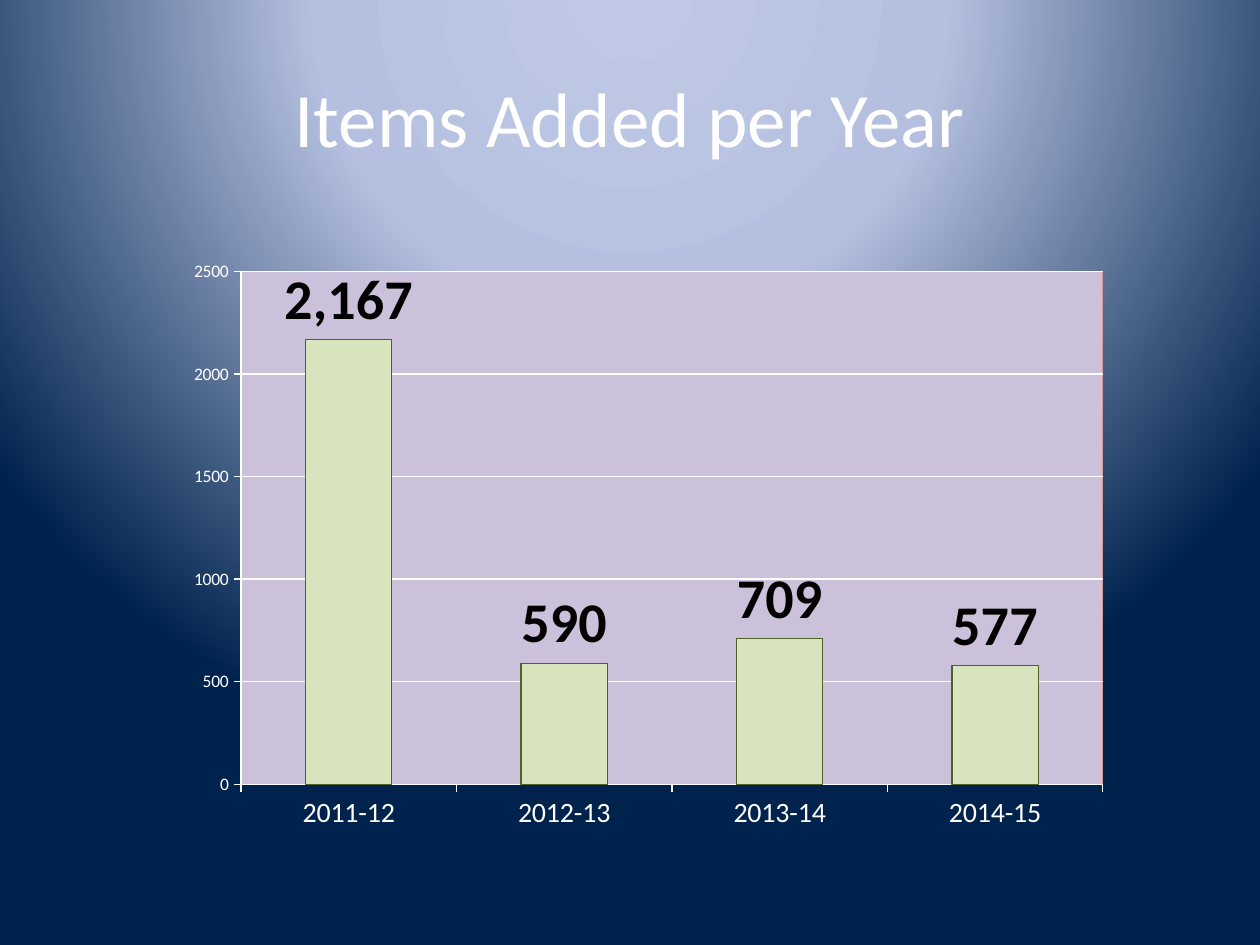
from lxml import etree
from pptx import Presentation
from pptx.chart.data import CategoryChartData
from pptx.dml.color import RGBColor
from pptx.enum import chart as ch, text
from pptx.oxml import parse_xml
from pptx.oxml.ns import nsdecls, qn
from pptx.util import Inches, Pt

# Content
TITLE = "Items Added per Year"
ITEMS_BY_YEAR = {"2011-12": 2167, "2012-13": 590, "2013-14": 709, "2014-15": 577}

# Style
FONT = "Calibri"
WHITE = RGBColor(0xFF, 0xFF, 0xFF)
BLACK = RGBColor(0x00, 0x00, 0x00)
LILAC = RGBColor(0xCC, 0xC1, 0xDA)
ROSE = RGBColor(0xD9, 0x96, 0x94)
PALE_GREEN = RGBColor(0xD7, 0xE4, 0xBD)
DARK_GREEN = RGBColor(0x4F, 0x62, 0x28)
GLOW = [(0, RGBColor(0xBF, 0xC9, 0xE5)), (40, RGBColor(0xB5, 0xC0, 0xE0)),
        (100, RGBColor(0x00, 0x23, 0x4D))]
PLOT_AREA = {"x": 0.157, "y": 0.082, "w": 0.76, "h": 0.822}


def set_font(font, size, color=WHITE, bold=False):
    font.name, font.size, font.bold = FONT, Pt(size), bold
    font.color.rgb = color


def add_text(slide, content, box, size, color=WHITE, align=text.PP_ALIGN.CENTER):
    frame = slide.shapes.add_textbox(*map(Inches, box)).text_frame
    frame.word_wrap = True
    frame.vertical_anchor = text.MSO_ANCHOR.MIDDLE
    paragraph = frame.paragraphs[0]
    paragraph.alignment = align
    run = paragraph.add_run()
    run.text = content
    set_font(run.font, size, color)


def set_glow(slide):
    slide.background.fill.solid()
    stops = "".join(f'<a:gs pos="{pos * 1000}"><a:srgbClr val="{color}"/></a:gs>'
                    for pos, color in GLOW)
    gradient = parse_xml(
        f'<a:gradFill {nsdecls("a")} rotWithShape="1"><a:gsLst>{stops}</a:gsLst>'
        '<a:path path="circle"><a:fillToRect l="50000" t="-80000" r="50000" b="180000"/>'
        '</a:path></a:gradFill>')
    solid = next(slide.element.iter(qn("a:solidFill")))
    solid.getparent().replace(solid, gradient)


def style_plot_area(chart):
    area = chart.element.find(".//" + qn("c:plotArea"))
    for old in area.findall(qn("c:layout")):
        area.remove(old)
    layout = etree.Element(qn("c:layout"))
    manual = etree.SubElement(layout, qn("c:manualLayout"))
    settings = {"layoutTarget": "inner", "xMode": "edge", "yMode": "edge", **PLOT_AREA}
    for tag, value in settings.items():
        etree.SubElement(manual, qn("c:" + tag)).set("val", str(value))
    area.insert(0, layout)
    area.append(parse_xml(
        f'<c:spPr {nsdecls("c", "a")}><a:solidFill><a:srgbClr val="{LILAC}"/></a:solidFill>'
        f'<a:ln w="9525"><a:solidFill><a:srgbClr val="{ROSE}"/></a:solidFill></a:ln></c:spPr>'))


def add_items_chart(slide, box):
    data = CategoryChartData(number_format="General")
    data.categories = list(ITEMS_BY_YEAR)
    data.add_series("Series 1", list(ITEMS_BY_YEAR.values()))
    chart = slide.shapes.add_chart(
        ch.XL_CHART_TYPE.COLUMN_CLUSTERED, *map(Inches, box), data).chart
    chart.has_legend = chart.has_title = False
    set_font(chart.font, 10)
    style_plot_area(chart)

    # Axes
    years, amounts = chart.category_axis, chart.value_axis
    for axis, size in ((years, 16), (amounts, 10)):
        axis.major_tick_mark = ch.XL_TICK_MARK.OUTSIDE
        axis.minor_tick_mark = ch.XL_TICK_MARK.NONE
        set_font(axis.tick_labels.font, size)
    amounts.minimum_scale, amounts.maximum_scale, amounts.major_unit = 0, 2500, 500
    amounts.has_major_gridlines = True
    for line in (years.format.line, amounts.format.line, amounts.major_gridlines.format.line):
        line.color.rgb, line.width = WHITE, Pt(0.75)

    # Columns and their labels
    plot = chart.plots[0]
    plot.gap_width, plot.vary_by_categories = 150, False
    columns = plot.series[0].format
    columns.fill.solid()
    columns.fill.fore_color.rgb = PALE_GREEN
    columns.line.color.rgb, columns.line.width = DARK_GREEN, Pt(0.75)
    labels = plot.series[0].data_labels
    labels.show_value = True
    labels.number_format, labels.number_format_is_linked = "#,##0", False
    labels.position = ch.XL_LABEL_POSITION.OUTSIDE_END
    set_font(labels.font, 32, BLACK, bold=True)


def main():
    deck = Presentation()
    deck.slide_width, deck.slide_height = Inches(10), Inches(7.5)
    slide = deck.slides.add_slide(deck.slide_layouts[6])
    set_glow(slide)
    add_text(slide, TITLE, (0.5, 0.3, 9, 1.25), 44)
    add_items_chart(slide, (0.5, 1.75, 9, 4.95))
    deck.save("out.pptx")


if __name__ == "__main__":
    main()
